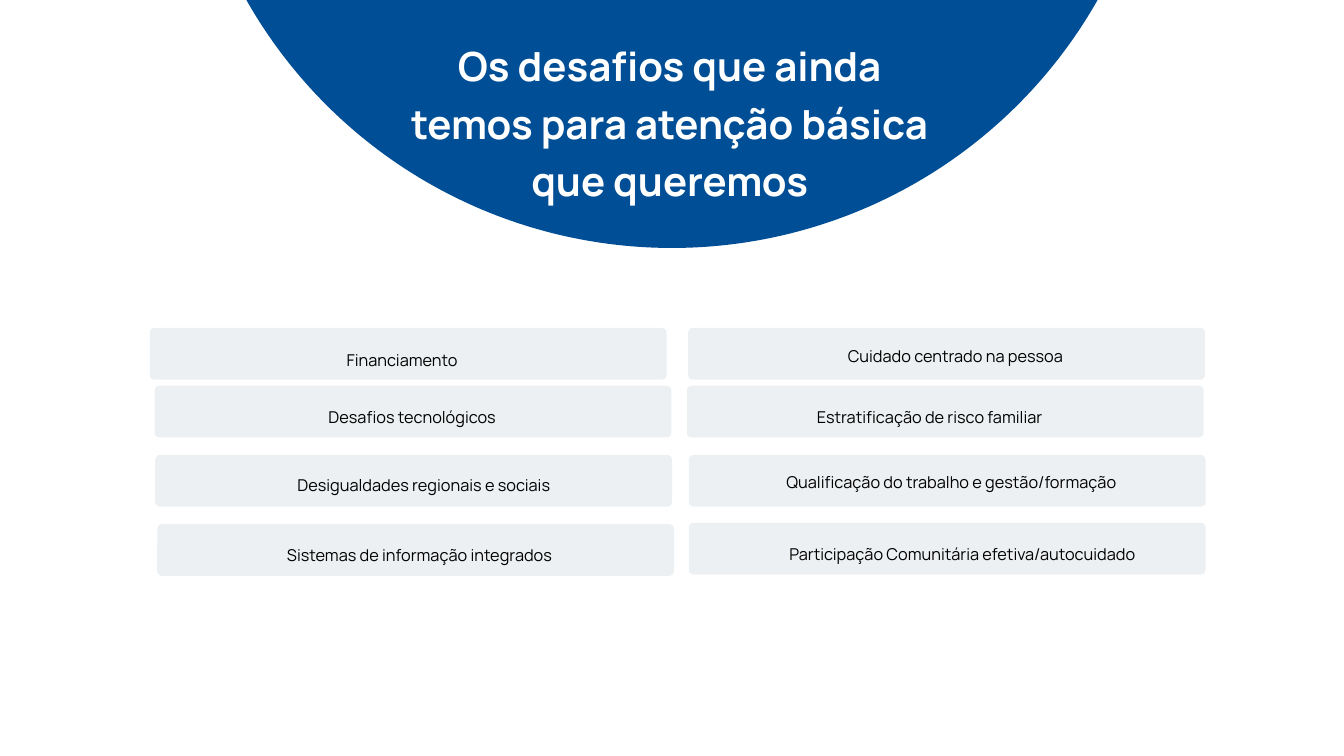
from pptx import Presentation
from pptx.dml.color import RGBColor
from pptx.enum.shapes import MSO_SHAPE
from pptx.enum.text import MSO_ANCHOR, MSO_AUTO_SIZE, PP_ALIGN
from pptx.util import Inches, Pt

OVAL = MSO_SHAPE.OVAL
ROUNDED = MSO_SHAPE.ROUNDED_RECTANGLE
CENTER = PP_ALIGN.CENTER
TOP = MSO_ANCHOR.TOP
NO_AUTOFIT = MSO_AUTO_SIZE.NONE
TITLE_ONLY = 5

# The slide is a grid of square cells, 20 columns wide and 11.25 rows high
CELL = Inches(1)
COLUMNS, ROWS = 20, 11.25
CARD_WIDTH, CARD_HEIGHT, CARD_RADIUS = 7.69, 0.77, 0.07
LABEL_HEIGHT = 0.41

TITLE = "Os desafios que ainda temos para atenção básica que queremos"
# Card left and top, label left, top and width, wording
CHALLENGES = [
    (2.23, 4.88, 4.52, 5.09, 2.93, "Financiamento"),
    (2.3, 5.74, 3.65, 5.94, 4.97, "Desafios tecnológicos"),
    (2.31, 6.77, 3.21, 6.96, 6.2, "Desigualdades regionais e sociais"),
    (2.34, 7.8, 3.08, 8, 6.33, "Sistemas de informação integrados"),
    (10.24, 4.88, 11.47, 5.03, 5.5, "Cuidado centrado na pessoa"),
    (10.22, 5.74, 9.99, 5.94, 7.69, "Estratificação de risco familiar"),
    (10.25, 6.77, 10.44, 6.91, 7.44, "Qualificação do trabalho e gestão/formação"),
    (10.25, 7.78, 10.74, 7.98, 7.17, "Participação Comunitária efetiva/autocuidado"),
]


def color(hex_string):
    return RGBColor.from_string(hex_string)


def grid(*cells):
    return [round(cell * CELL) for cell in cells]


class SlideBuilder:
    """Holds the style and the current slide."""

    blue, gray, white, black = "004E95", "EDF0F2", "FFFFFF", "000000"
    title_font = {"name": "Manrope", "size": Pt(43), "bold": True}
    label_font = {"name": "Manrope", "size": Pt(17.5), "bold": False}
    frame_format = {
        "margin_left": 0, "margin_top": 0, "margin_right": 0, "margin_bottom": 0,
        "word_wrap": True, "auto_size": NO_AUTOFIT, "vertical_anchor": TOP,
    }

    def __init__(self, deck):
        self.slide = deck.slides.add_slide(deck.slide_layouts[TITLE_ONLY])

    def shape(self, kind, place, fill):
        shape = self.slide.shapes.add_shape(kind, *grid(*place))
        shape.shadow.inherit = False
        shape.fill.solid()
        shape.fill.fore_color.rgb = color(fill)
        shape.line.fill.background()
        return shape

    def set_text(self, box, text, font, text_color, spacing):
        frame = box.text_frame
        for name, value in self.frame_format.items():
            setattr(frame, name, value)
        para = frame.paragraphs[0]
        para.alignment = CENTER
        para.line_spacing = spacing
        span = para.add_run()
        span.text = text
        for name, value in font.items():
            setattr(span.font, name, value)
        span.font.color.rgb = color(text_color)

    def header(self, text):
        diameter, bottom = 14.56, 3.69
        place = ((COLUMNS - diameter) / 2, bottom - diameter, diameter, diameter)
        circle = self.shape(OVAL, place, self.blue)
        title = self.slide.shapes.title
        title.left, title.top, title.width, title.height = grid(5.86, 0.47, 8.21, 2.78)
        self.set_text(title, text, self.title_font, self.white, 1.2)
        # Bring the title in front of the circle
        circle.element.addnext(title.element)

    def card(self, left, top):
        card = self.shape(ROUNDED, (left, top, CARD_WIDTH, CARD_HEIGHT), self.gray)
        card.adjustments[0] = CARD_RADIUS / CARD_HEIGHT

    def label(self, left, top, width, text):
        box = self.slide.shapes.add_textbox(*grid(left, top, width, LABEL_HEIGHT))
        self.set_text(box, text, self.label_font, self.black, 1.4)


def main():
    deck = Presentation()
    deck.slide_width, deck.slide_height = grid(COLUMNS, ROWS)
    builder = SlideBuilder(deck)

    # Blue circle with the title
    builder.header(TITLE)

    # Two columns of challenges
    for card_left, card_top, *label in CHALLENGES:
        builder.card(card_left, card_top)
        builder.label(*label)

    deck.save("out.pptx")


if __name__ == "__main__":
    main()
